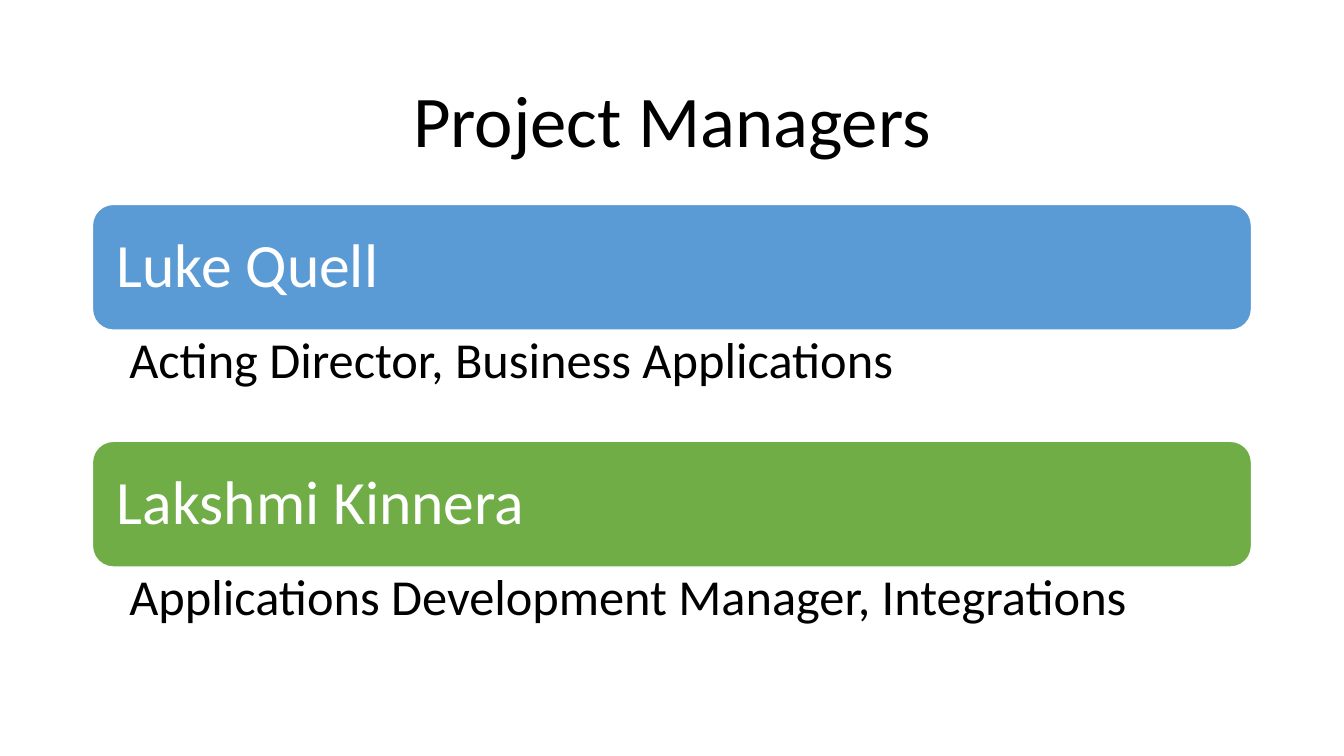
from pptx import Presentation
from pptx.dml.color import RGBColor
from pptx.enum.shapes import MSO_SHAPE as Shape
from pptx.enum.text import MSO_ANCHOR as Anchor, PP_ALIGN as Align
from pptx.util import Cm, Pt

FONT = "Calibri"
LEFT, WIDTH = 2.33, 29.21
MANAGERS_TOP, BAR_HEIGHT, ROLE_HEIGHT = 5.15, 3.17, 2.8
MANAGERS = [
    ("Luke Quell", "Acting Director, Business Applications", "5B9BD5"),
    ("Lakshmi Kinnera", "Applications Development Manager, Integrations", "70AD47"),
]


def color(hex_code):
    return RGBColor.from_string(hex_code)


def write(box, text, size, hex_code, align=Align.LEFT, anchor=Anchor.MIDDLE,
          insets=(0.25, 0.13, 0.25, 0.13)):
    """Fill a shape with one paragraph; insets are left, top, right, bottom in cm."""
    frame = box.text_frame
    frame.text = text
    frame.word_wrap = True
    frame.vertical_anchor = anchor
    (frame.margin_left, frame.margin_top,
     frame.margin_right, frame.margin_bottom) = map(Cm, insets)
    para = frame.paragraphs[0]
    para.alignment = align
    para.line_spacing = 0.9
    font = para.runs[0].font
    font.name, font.size = FONT, Pt(size)
    font.color.rgb = color(hex_code)


def add_title(page, left, top, width, height):
    box = page.shapes.add_textbox(Cm(left), Cm(top), Cm(width), Cm(height))
    write(box, "Project Managers", 52, "000000", align=Align.CENTER)


def add_manager(page, left, top, width, name, role, fill):
    """Place a coloured name bar with the role below it."""
    bar = page.shapes.add_shape(Shape.ROUNDED_RECTANGLE,
                                Cm(left), Cm(top), Cm(width), Cm(BAR_HEIGHT))
    bar.shadow.inherit = False
    bar.fill.solid()
    bar.fill.fore_color.rgb = color(fill)
    bar.line.color.rgb = color("FFFFFF")
    bar.line.width = Pt(1)
    # The rounded corners already inset the text by about 0.15 cm.
    write(bar, name, 44, "FFFFFF", insets=(0.46, 0.46, 0.46, 0.46))

    role_box = page.shapes.add_textbox(Cm(left), Cm(top + BAR_HEIGHT),
                                       Cm(width), Cm(ROLE_HEIGHT))
    write(role_box, role, 36, "000000", anchor=Anchor.TOP,
          insets=(0.93, 0.13, 0.71, 0.13))


def main():
    deck = Presentation()
    deck.slide_width, deck.slide_height = Cm(33.87), Cm(19.05)
    page = deck.slides.add_slide(deck.slide_layouts[6])
    add_title(page, LEFT, 1.55, WIDTH, 3.15)
    for row, manager in enumerate(MANAGERS):
        top = MANAGERS_TOP + row * (BAR_HEIGHT + ROLE_HEIGHT)
        add_manager(page, LEFT, top, WIDTH, *manager)
    deck.save("out.pptx")


if __name__ == "__main__":
    main()
